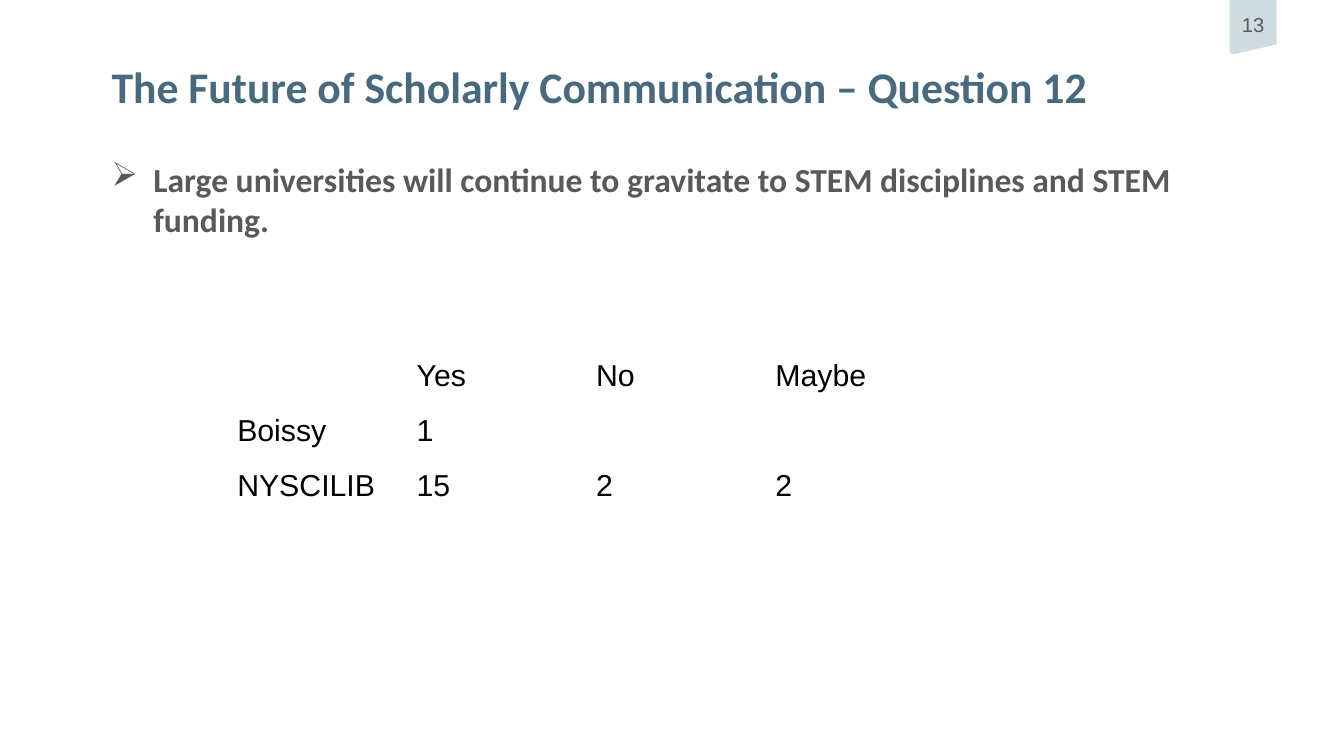
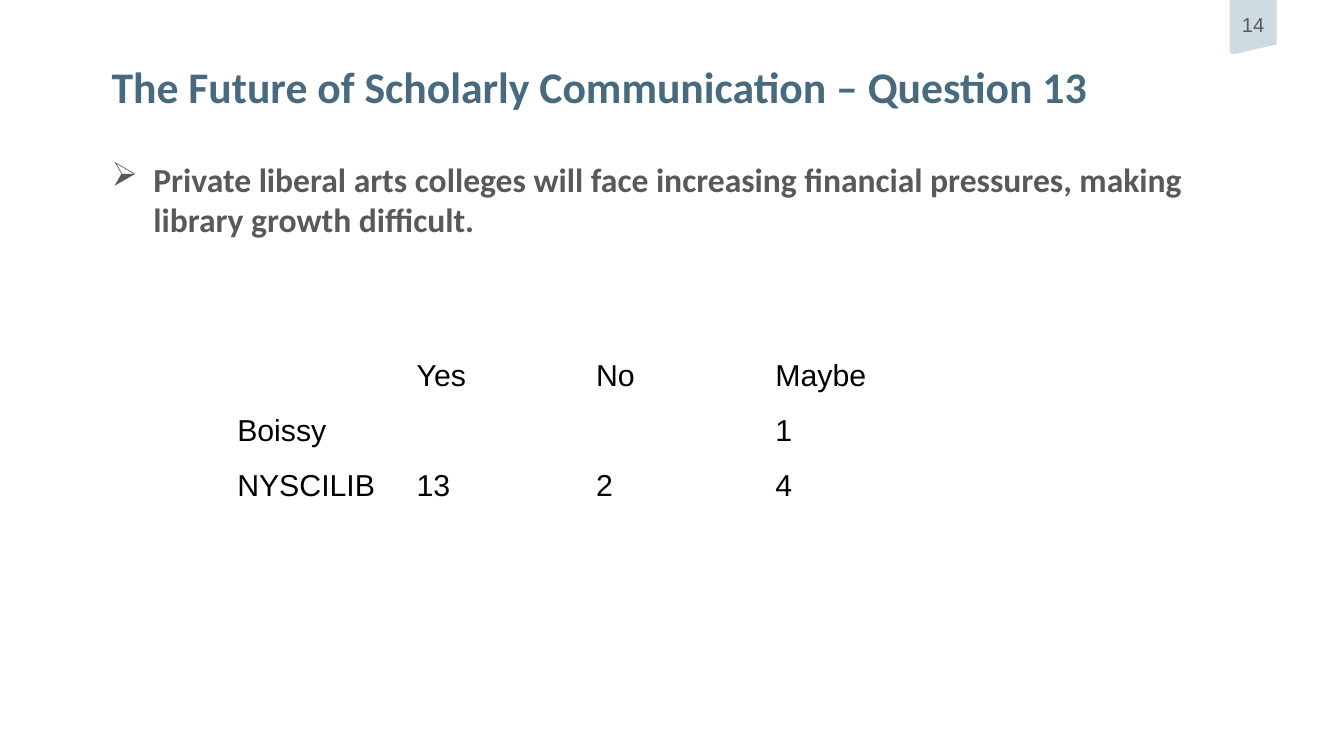
from lxml import etree
from pptx import Presentation
from pptx import util as u
from pptx.dml.color import RGBColor
from pptx.enum import text
from pptx.oxml import ns

NAVY, GREY, PALE, BLACK = "486A7E", "58595B", "CEDBE0", "000000"
LEFT, WIDTH = u.Cm(2.11), u.Cm(21.13)
ANSWERS = ["Yes", "No", "Maybe"]
QUESTIONS = [
    (13, 12,
     "Large universities will continue to gravitate to STEM disciplines and STEM funding.",
     ["1", "", ""], ["15", "2", "2"]),
    (14, 13,
     "Private liberal arts colleges will face increasing financial pressures, making library growth difficult.",
     ["", "", "1"], ["13", "2", "4"]),
]


def colour(value):
    return RGBColor.from_string(value)


class Deck:
    def __init__(self):
        self.presentation = Presentation()
        self.presentation.slide_width = u.Cm(25.4)
        self.presentation.slide_height = u.Cm(14.29)
        self.slide = None

    def add_slide(self):
        self.slide = self.presentation.slides.add_slide(self.presentation.slide_layouts[5])

    def style(self, paragraph, font, size, value, bold=False, align=text.PP_ALIGN.LEFT):
        paragraph.alignment = align
        paragraph.space_before = u.Pt(0)
        for run in paragraph.runs:
            run.font.name = font
            run.font.size = u.Pt(size)
            run.font.bold = bold
            run.font.color.rgb = colour(value)

    def frame(self, shape, words, anchor=text.MSO_ANCHOR.TOP, bottom=0):
        frame = shape.text_frame
        frame.margin_left = frame.margin_top = frame.margin_right = 0
        frame.margin_bottom = u.Cm(bottom)
        frame.word_wrap = True
        frame.auto_size = text.MSO_AUTO_SIZE.NONE
        frame.vertical_anchor = anchor
        frame.text = words
        return frame.paragraphs[0]

    def page_tab(self, number):
        outline = [(23.24, 0), (24.13, 0), (24.13, 0.84), (23.34, 1.02),
                   (23.27, 1.01), (23.24, 0.97)]
        points = [(u.Cm(x), u.Cm(y)) for x, y in outline]
        builder = self.slide.shapes.build_freeform(*points[0])
        builder.add_line_segments(points[1:])
        shape = builder.convert_to_shape()
        shape.shadow.inherit = False
        shape.fill.solid()
        shape.fill.fore_color.rgb = colour(PALE)
        shape.line.fill.background()
        paragraph = self.frame(shape, str(number), text.MSO_ANCHOR.MIDDLE, 0.1)
        self.style(paragraph, "Arial", 10.8, GREY, align=text.PP_ALIGN.CENTER)

    def title(self, words):
        shape = self.slide.shapes.title
        shape.left, shape.top, shape.width, shape.height = LEFT, u.Cm(1.13), WIDTH, u.Cm(0.76)
        self.style(self.frame(shape, words), "Calibri", 23.4, NAVY, bold=True)

    def statement(self, words):
        shape = self.slide.shapes.add_textbox(LEFT, u.Cm(3), WIDTH, u.Cm(2.41))
        paragraph = self.frame(shape, words)
        properties = paragraph._p.get_or_add_pPr()
        indent = u.Cm(0.79)
        properties.set("marL", str(indent))
        properties.set("indent", str(-indent))
        bullet_colour = etree.SubElement(properties, ns.qn("a:buClr"))
        etree.SubElement(bullet_colour, ns.qn("a:srgbClr"), val=GREY)
        etree.SubElement(properties, ns.qn("a:buFont"), typeface="Wingdings",
                         pitchFamily="2", charset="2")
        etree.SubElement(properties, ns.qn("a:buChar"), char="Ø")
        self.style(paragraph, "Calibri", 18, GREY, bold=True)

    def table(self, rows):
        column_width, row_height = u.Cm(3.39), u.Cm(1.04)
        table = self.slide.shapes.add_table(
            len(rows), len(rows[0]), u.Cm(4.23), u.Cm(6.66),
            column_width * len(rows[0]), row_height * len(rows)).table
        table.first_row = table.horz_banding = False
        for row_index, row in enumerate(rows):
            for column_index, words in enumerate(row):
                cell = table.cell(row_index, column_index)
                cell.fill.background()
                cell.text = words
                self.style(cell.text_frame.paragraphs[0], "Arial", 16.2, BLACK)


def main():
    deck = Deck()
    for page, question, statement, boissy, library in QUESTIONS:
        deck.add_slide()
        deck.page_tab(page)
        deck.title(f"The Future of Scholarly Communication – Question {question}")
        deck.statement(statement)
        deck.table([["", *ANSWERS], ["Boissy", *boissy], ["NYSCILIB", *library]])
    deck.presentation.save("out.pptx")


if __name__ == "__main__":
    main()
